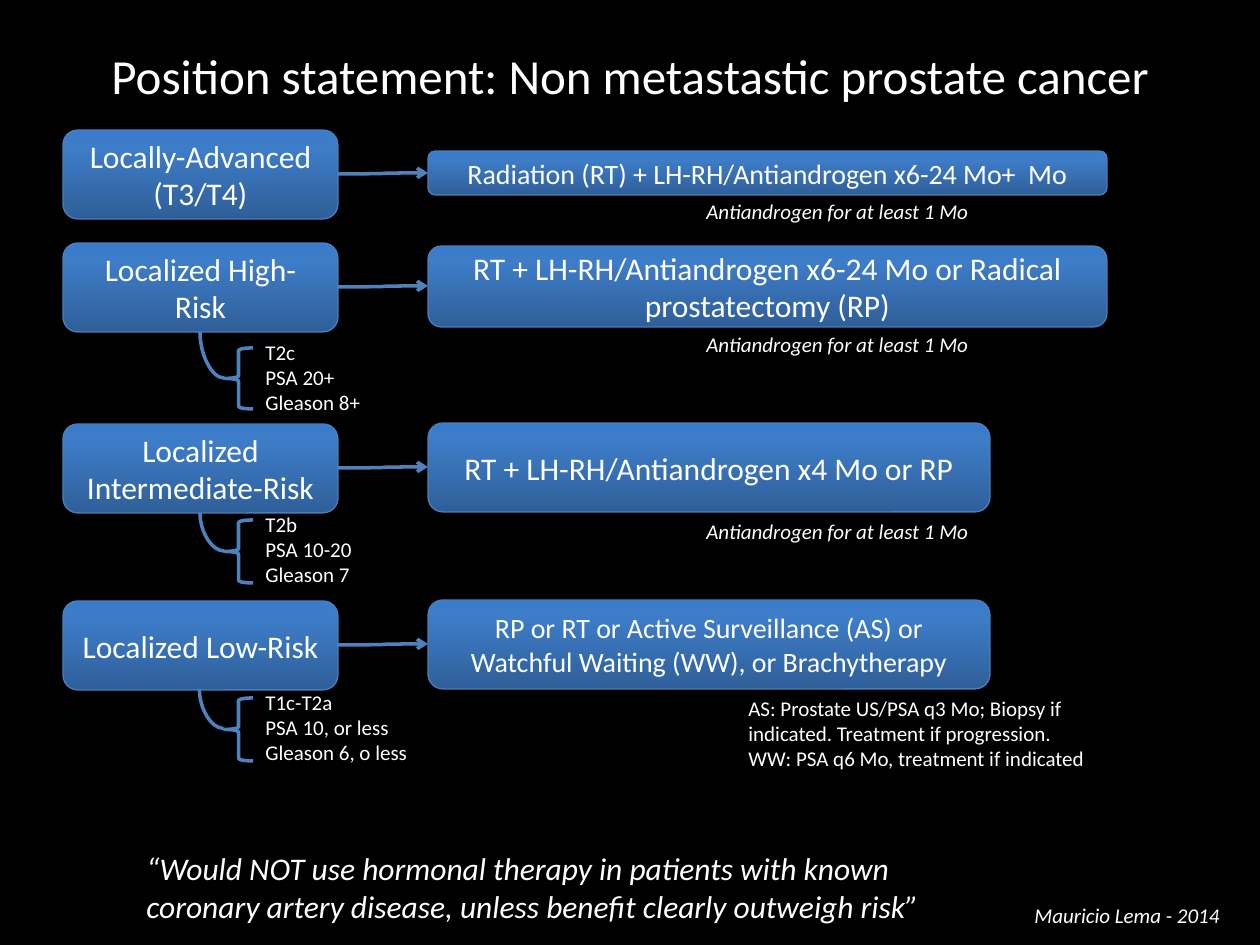
from dataclasses import dataclass

from lxml import etree
from pptx import Presentation
from pptx.dml import color
from pptx.enum import shapes, text
from pptx.oxml import ns, parse_xml
from pptx.util import Pt

PX = 914400 / 126
WHITE, LINE, EDGE = "FFFFFF", "4F81BD", "4B7EBC"
GRADIENT = [(0, "2F5F99"), (80000, "3D7CC7"), (100000, "3A7CCB")]
STAGE_X, STAGE_W, STAGE_H = 63, 275, 89
TREATMENT_X = 428
BRACE_X, BRACE_W = 224, 29


@dataclass
class Box:
    x: int
    y: int
    w: int
    h: int
    words: str
    size: int = 18


@dataclass
class Criteria:
    y: int
    h: int
    text_w: int
    lines: list[str]


@dataclass
class Risk:
    stage: Box
    treatment: Box
    criteria: Criteria | None = None


@dataclass
class Note:
    x: int
    y: int
    w: int
    h: int
    lines: list[str]
    size: int = 12
    italic: bool = True
    wrap: bool = False


def emu(*px: int) -> list[int]:
    return [round(v * PX) for v in px]


def rgb(value: str) -> color.RGBColor:
    return color.RGBColor.from_string(value)


def write(tf, lines: list[str], size: int, italic: bool = False, align=text.PP_ALIGN.LEFT) -> None:
    for i, line in enumerate(lines):
        p = tf.paragraphs[0] if i == 0 else tf.add_paragraph()
        p.alignment = align
        r = p.add_run()
        r.text = line
        r.font.name = "Calibri"
        r.font.size = Pt(size)
        r.font.italic = italic
        r.font.color.rgb = rgb(WHITE)


def add_box(slide, box: Box) -> None:
    sp = slide.shapes.add_shape(shapes.MSO_SHAPE.ROUNDED_RECTANGLE, *emu(box.x, box.y, box.w, box.h))
    sp.shadow.inherit = False
    stops = "".join(f'<a:gs pos="{pos}"><a:srgbClr val="{c}"/></a:gs>' for pos, c in GRADIENT)
    grad = parse_xml(
        f'<a:gradFill {ns.nsdecls("a")} rotWithShape="1"><a:gsLst>{stops}</a:gsLst>'
        '<a:lin ang="16200000" scaled="0"/></a:gradFill>')
    sp._element.spPr.find(ns.qn("a:prstGeom")).addnext(grad)
    sp.line.color.rgb = rgb(EDGE)
    sp.line.width = Pt(0.75)
    sp.text_frame.vertical_anchor = text.MSO_ANCHOR.MIDDLE
    write(sp.text_frame, [box.words], box.size, align=text.PP_ALIGN.CENTER)


def add_note(slide, note: Note) -> None:
    sp = slide.shapes.add_textbox(*emu(note.x, note.y, note.w, note.h))
    tf = sp.text_frame
    tf.word_wrap = note.wrap
    tf.auto_size = text.MSO_AUTO_SIZE.SHAPE_TO_FIT_TEXT
    write(tf, note.lines, note.size, note.italic)


def add_curve(slide, x1: int, y1: int, x2: int, y2: int):
    cxn = slide.shapes.add_connector(shapes.MSO_CONNECTOR.CURVE, *emu(x1, y1, x2, y2))
    cxn.line.color.rgb = rgb(LINE)
    cxn.line.width = Pt(2)
    etree.SubElement(cxn._element.spPr, ns.qn("a:effectLst"))
    return cxn


def add_arrow(slide, stage: Box, treatment: Box) -> None:
    cxn = add_curve(slide, stage.x + stage.w, stage.y + stage.h // 2,
                    treatment.x, treatment.y + treatment.h // 2)
    etree.SubElement(cxn.line._get_or_add_ln(), ns.qn("a:tailEnd"), type="arrow")


def add_criteria(slide, stage: Box, criteria: Criteria) -> None:
    brace = slide.shapes.add_shape(
        shapes.MSO_SHAPE.LEFT_BRACE, *emu(BRACE_X, criteria.y, BRACE_W, criteria.h))
    brace.shadow.inherit = False
    brace.fill.background()
    brace.line.color.rgb = rgb(LINE)
    brace.line.width = Pt(2)

    x, y = stage.x + stage.w // 2, stage.y + stage.h
    run, drop = BRACE_X - x, criteria.y + criteria.h // 2 - y
    left, top = x + (run - drop) // 2, y + (drop - run) // 2
    cxn = add_curve(slide, left, top, left + drop, top + run)
    spPr = cxn._element.spPr
    spPr.find(ns.qn("a:prstGeom")).set("prst", "curvedConnector2")
    xfrm = spPr.find(ns.qn("a:xfrm"))
    xfrm.set("rot", "16200000")
    xfrm.set("flipH", "1")
    add_note(slide, Note(BRACE_X + BRACE_W, criteria.y - 15, criteria.text_w, 89,
                         criteria.lines, italic=False))


def stage_box(y: int, words: str) -> Box:
    return Box(STAGE_X, y, STAGE_W, STAGE_H, words)


def treatment_box(y: int, w: int, h: int, words: str, size: int = 18) -> Box:
    return Box(TREATMENT_X, y, w, h, words, size)


RISKS = [
    Risk(stage_box(130, "Locally-Advanced (T3/T4)"),
         treatment_box(151, 679, 44, "Radiation (RT) + LH-RH/Antiandrogen x6-24 Mo+  Mo", 16)),
    Risk(stage_box(243, "Localized High-Risk"),
         treatment_box(246, 679, 81, "RT + LH-RH/Antiandrogen x6-24 Mo or Radical prostatectomy (RP)"),
         Criteria(348, 61, 121, ["T2c", "PSA 20+", "Gleason 8+"])),
    Risk(stage_box(424, "Localized Intermediate-Risk"),
         treatment_box(423, 562, 89, "RT + LH-RH/Antiandrogen x4 Mo or RP"),
         Criteria(520, 63, 112, ["T2b", "PSA 10-20", "Gleason 7"])),
    Risk(stage_box(601, "Localized Low-Risk"),
         treatment_box(600, 562, 89, "RP or RT or Active Surveillance (AS) or Watchful Waiting (WW), "
                       "or Brachytherapy", 16),
         Criteria(698, 63, 169, ["T1c-T2a", "PSA 10, or less", "Gleason 6, o less"])),
]

NOTES = [Note(694, y, 296, 38, ["Antiandrogen for at least 1 Mo"]) for y in (192, 325, 512)] + [
    Note(736, 689, 421, 89, ["AS: Prostate US/PSA q3 Mo; Biopsy if indicated. Treatment if progression.",
                             "WW: PSA q6 Mo, treatment if indicated"], italic=False, wrap=True),
    Note(134, 843, 857, 89, ["“Would NOT use hormonal therapy in patients with known coronary artery "
                             "disease, unless benefit clearly outweigh risk”"], size=18, wrap=True),
    Note(1022, 896, 218, 38, ["Mauricio Lema - 2014"]),
]


def main() -> None:
    prs = Presentation()
    prs.slide_width, prs.slide_height = emu(1260, 945)
    slide = prs.slides.add_slide(prs.slide_layouts[5])
    slide.background.fill.solid()
    slide.background.fill.fore_color.rgb = rgb("000000")

    title = slide.shapes.title
    title.left, title.top, title.width, title.height = emu(63, 38, 1134, 73)
    title.text_frame.auto_size = text.MSO_AUTO_SIZE.NONE
    title.text_frame.vertical_anchor = text.MSO_ANCHOR.MIDDLE
    write(title.text_frame, ["Position statement: Non metastastic prostate cancer"], 28,
          align=text.PP_ALIGN.CENTER)

    for risk in RISKS:
        add_box(slide, risk.stage)
        add_box(slide, risk.treatment)
        add_arrow(slide, risk.stage, risk.treatment)
        if risk.criteria:
            add_criteria(slide, risk.stage, risk.criteria)
    for note in NOTES:
        add_note(slide, note)
    prs.save("out.pptx")


if __name__ == "__main__":
    main()
